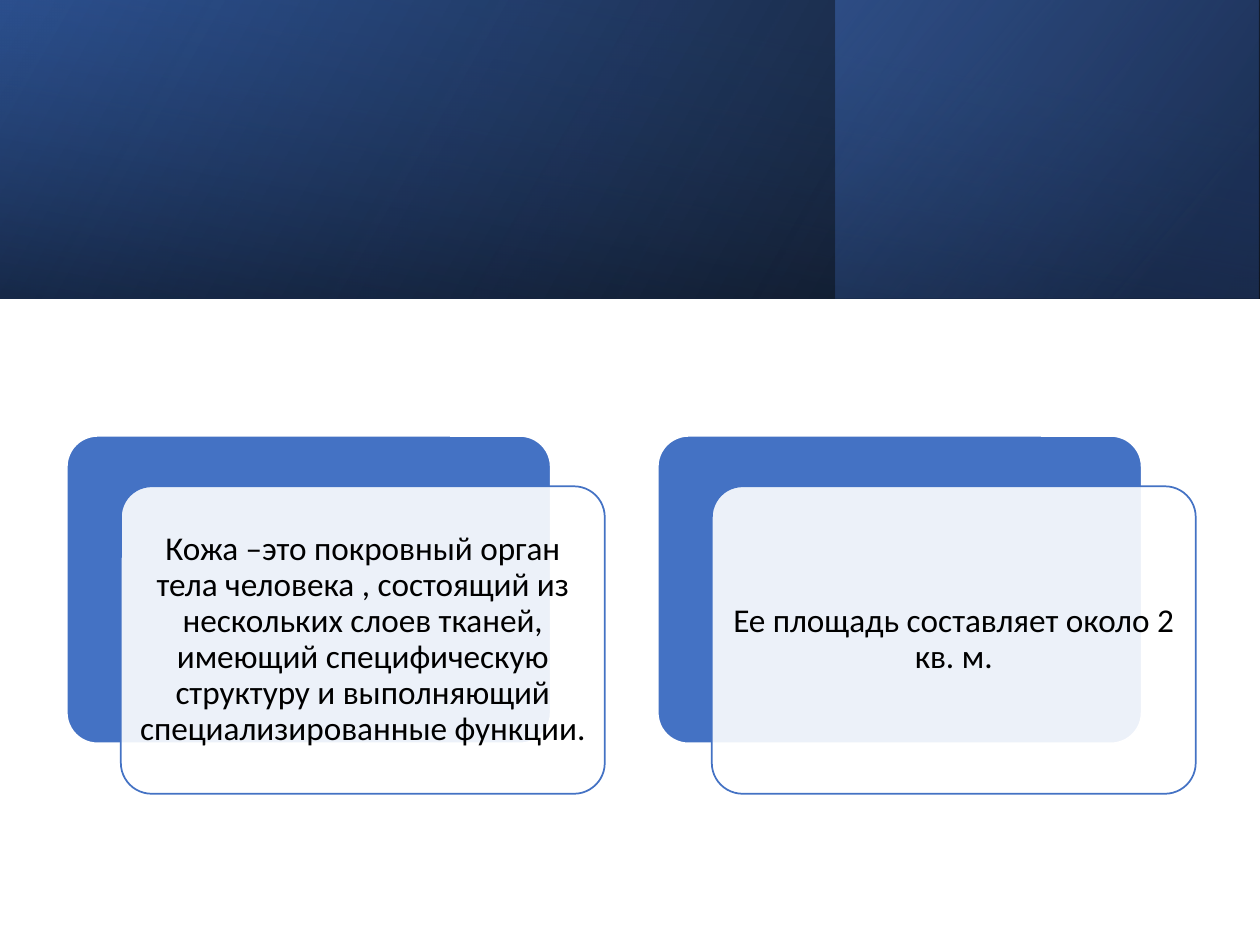
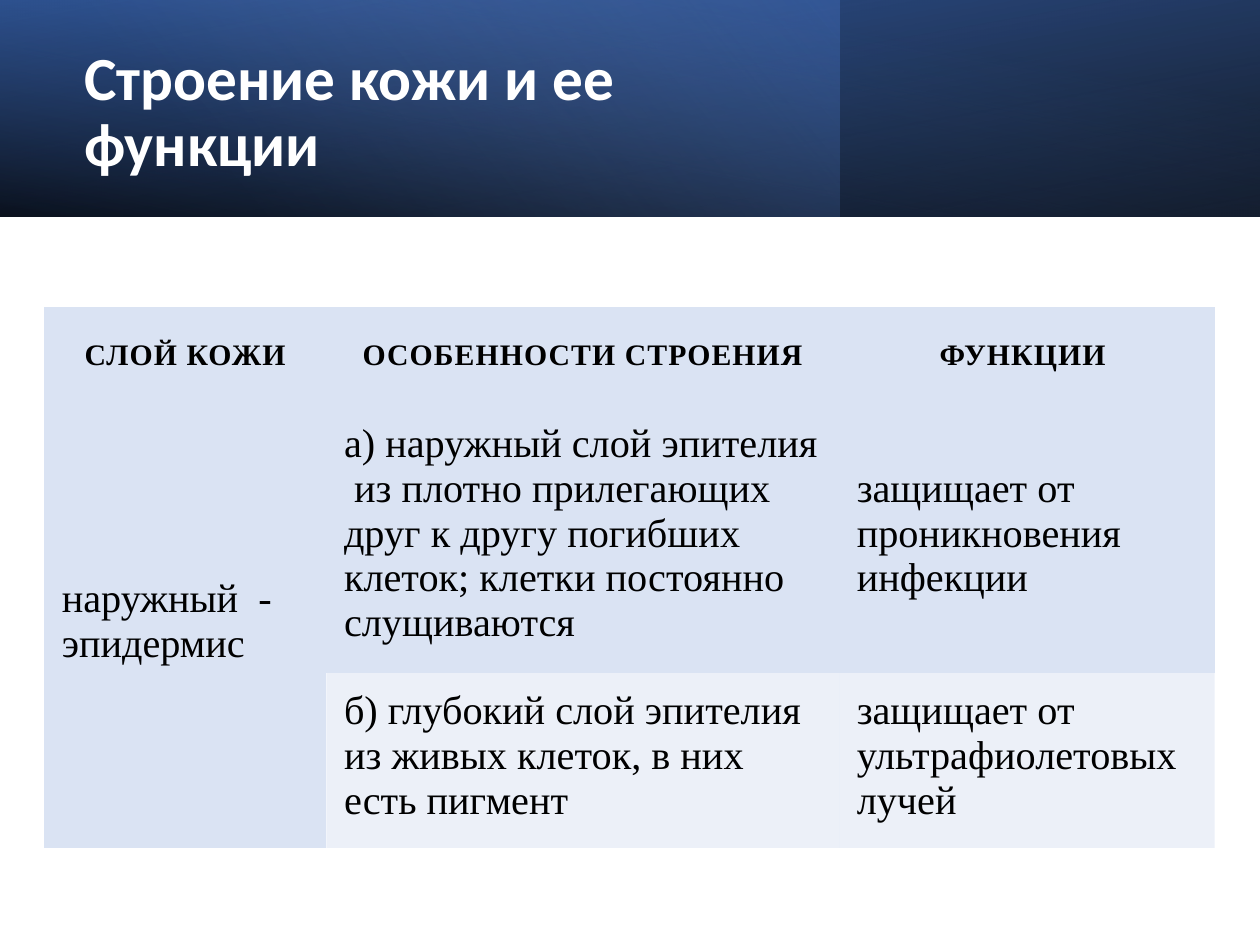
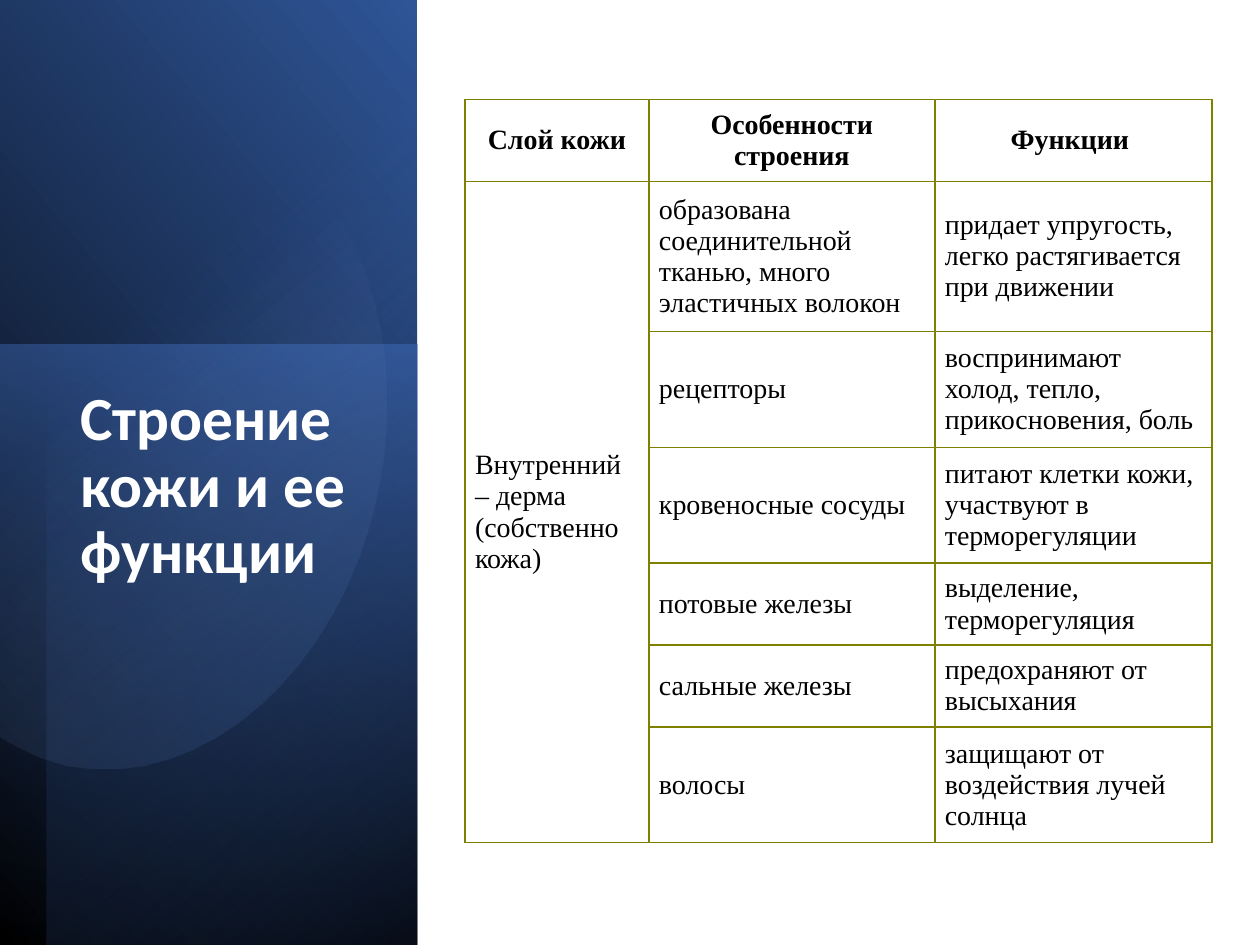
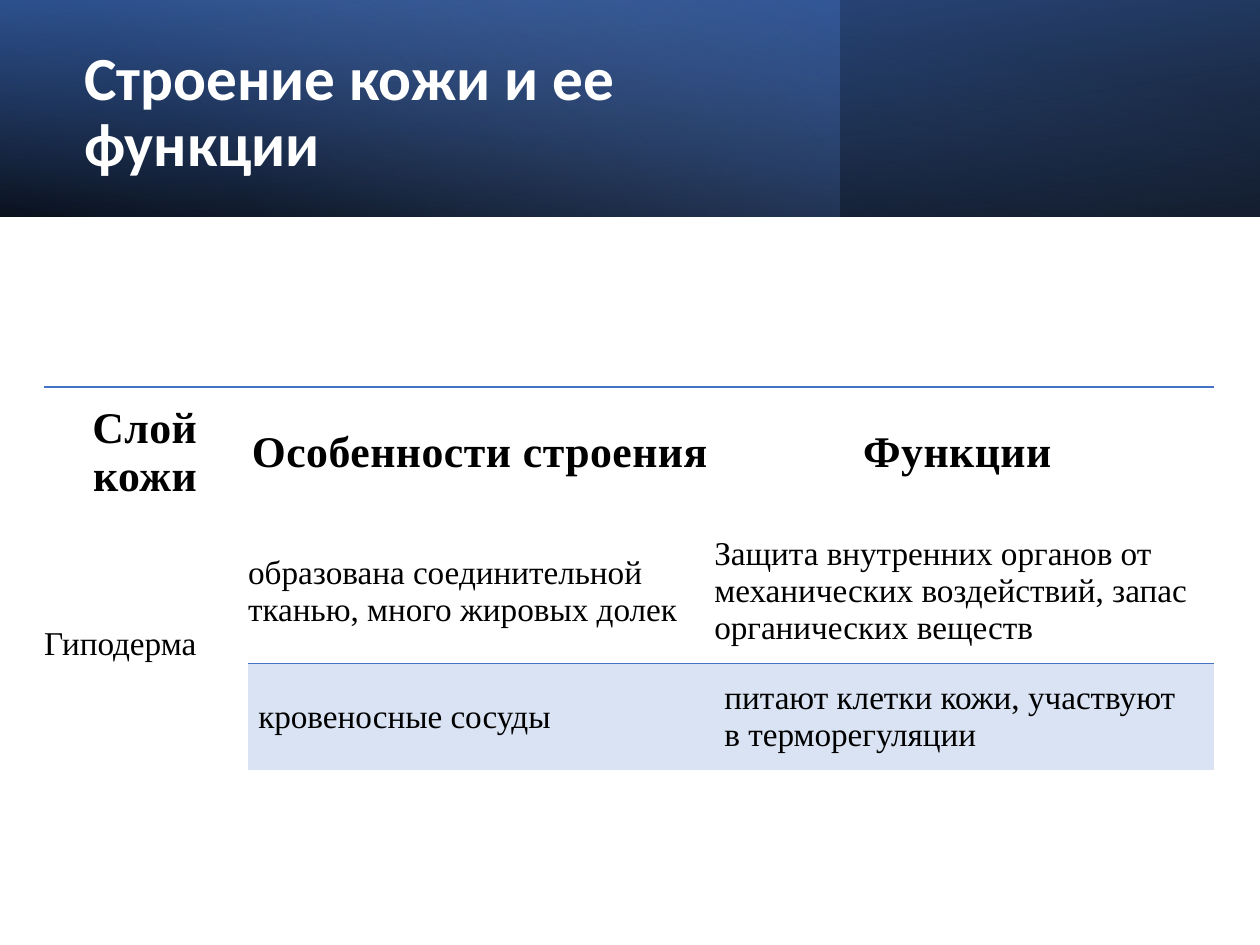
from dataclasses import dataclass

from lxml import etree
from pptx import Presentation
from pptx.dml.color import RGBColor
from pptx.enum.shapes import MSO_SHAPE
from pptx.enum.text import MSO_ANCHOR, PP_ALIGN
from pptx.oxml import parse_xml
from pptx.oxml.ns import nsdecls, qn
from pptx.util import Pt

RECT, ROUNDED = MSO_SHAPE.RECTANGLE, MSO_SHAPE.ROUNDED_RECTANGLE
TOP, MIDDLE = MSO_ANCHOR.TOP, MSO_ANCHOR.MIDDLE
LEFT, CENTER = PP_ALIGN.LEFT, PP_ALIGN.CENTER


@dataclass(frozen=True)
class Theme:
    black: str = "000000"
    white: str = "FFFFFF"
    blue: str = "4472C4"
    deep: str = "2F5597"
    navy: str = "203864"
    sky: str = "8FAADC"
    pale: str = "DAE3F3"
    olive: str = "808000"
    sans: str = "Calibri"
    serif: str = "Times New Roman"
    title: float = 35
    card: float = 19


T = Theme()
PLAIN_TABLE = "{2D5ABB26-0587-4C30-8999-92F81FD0307C}"
TITLE = "Строение кожи и ее функции"
W, H = 720, 540


def gradient(sp, stops, angle):
    """Fill a shape with a linear gradient of (position, colour, opacity) stops, all in percent."""
    gs = "".join(
        f'<a:gs pos="{pos * 1000}"><a:srgbClr val="{color}"><a:alpha val="{alpha * 1000}"/>'
        f"</a:srgbClr></a:gs>" for pos, color, alpha in stops)
    sp.shadow.inherit = False
    sp.line.fill.background()
    sp.fill.background()
    spPr = sp._element.spPr
    spPr.replace(spPr.find(qn("a:noFill")), parse_xml(
        f'<a:gradFill {nsdecls("a")} rotWithShape="1"><a:gsLst>{gs}</a:gsLst>'
        f'<a:lin ang="{round(angle * 60000)}" scaled="0"/></a:gradFill>'))


def write(tf, lines, font, color, align=LEFT, para=None, spc=0):
    """Write one paragraph per line with the same font and paragraph values."""
    for i, line in enumerate(lines):
        p = tf.paragraphs[0] if i == 0 else tf.add_paragraph()
        p.alignment = align
        for name, value in (para or {}).items():
            setattr(p, name, value)
        r = p.add_run()
        r.text = line
        for name, value in font.items():
            setattr(r.font, name, value)
        r.font.color.rgb = RGBColor.from_string(color)
        if spc:
            r._r.get_or_add_rPr().set("spc", str(round(spc * 100)))


prs = Presentation()
prs.slide_width, prs.slide_height = Pt(W), Pt(H)
slides = [prs.slides.add_slide(prs.slide_layouts[6]) for _ in range(4)]

# Gradient bands: visible box, rotation, flip, stops, angle
TALL, LOW, SIDE = 170.6, 123.8, 238.3
cover_band = [
    ((0, 0, W, TALL), 0, True, [(0, T.black, 96), (100, T.deep, 100)], 330),
    ((477.4, 0, 242, TALL), 0, True, [(19, T.navy, 68), (100, T.blue, 48)], 320),
    ((0, 0, W, TALL), 270, True, [(23, T.deep, 16), (99, T.black, 45)], 350),
]
top_band = [
    ((0, 0, W, LOW), 180, True, [(0, T.black, 96), (100, T.deep, 100)], 100),
    ((0, 0, 480, LOW), 0, False, [(0, T.blue, 41), (74, T.sky, 0)], 140),
    ((0, 0, W, LOW), 0, True, [(0, T.black, 63), (78, T.blue, 15)], 260),
]
side_band = [
    ((0, 0, SIDE, H), 90, True, [(0, T.black, 100), (100, T.deep, 100)], 310),
    ((0, 197, SIDE, 343), 270, False, [(0, T.blue, 50), (100, T.navy, 0)], 190),
    ((26.6, 0, SIDE - 26.6, H), 270, True, [(0, T.black, 59), (69, T.blue, 0)], 220),
]
for s, band in zip(slides, [cover_band, top_band, side_band, top_band]):
    for (x, y, w, h), rot, flip, stops, angle in band:
        # A quarter turn swaps width and height around the same centre
        fw, fh = (h, w) if rot in (90, 270) else (w, h)
        sp = s.shapes.add_shape(RECT, Pt(x + (w - fw) / 2), Pt(y + (h - fh) / 2), Pt(fw), Pt(fh))
        sp.rotation = rot
        if flip:
            sp._element.spPr.get_or_add_xfrm().set("flipH", "1")
        gradient(sp, stops, angle)

# Slide 1: two offset cards
cards = [
    "Кожа –это покровный орган тела человека , состоящий из нескольких слоев тканей, "
    "имеющий специфическую структуру и выполняющий специализированные функции.",
    "Ее площадь составляет около 2 кв. м.",
]
CARD_W, CARD_H, PAD = 276.5, 175.7, 5
group = slides[0].shapes.add_group_shape().shapes
for i, text in enumerate(cards):
    x, y = 38.2 + 337.7 * i, 249.1
    for dx, dy, fill, line, alpha in [(0, 0, T.blue, T.white, 100), (30.9, 28.8, T.white, T.blue, 90)]:
        sp = group.add_shape(ROUNDED, Pt(x + dx), Pt(y + dy), Pt(CARD_W), Pt(CARD_H))
        sp.adjustments[0] = 0.1
        sp.shadow.inherit = False
        sp.fill.solid()
        sp.fill.fore_color.rgb = RGBColor.from_string(fill)
        etree.SubElement(sp._element.spPr.find(qn("a:solidFill"))[0], qn("a:alpha"), val=str(alpha * 1000))
        sp.line.color.rgb = RGBColor.from_string(line)
        sp.line.width = Pt(1)
    tb = group.add_textbox(Pt(x + dx + PAD), Pt(y + dy + PAD), Pt(CARD_W - 2 * PAD), Pt(CARD_H - 2 * PAD))
    tf = tb.text_frame
    tf.word_wrap, tf.vertical_anchor = True, MIDDLE
    for side in ("left", "top", "right", "bottom"):
        setattr(tf, f"margin_{side}", Pt(5.7))
    write(tf, [text], {"name": T.sans, "size": Pt(T.card)}, T.black, CENTER,
          {"line_spacing": 0.9, "space_after": Pt(6.6)})

# Slide 3: translucent ellipse part, Bezier curves sampled into short segments
start = (86.4, 64.1)
curves = [
    [(95.8, 63.4), (105.8, 64.1), (115.2, 65.5)],
    [(192.2, 81.4), (236.9, 177.8), (216, 280.1)],
    [(195.1, 382.3), (115.9, 452.2), (38.9, 437)],
    [(24.5, 433.4), (11.5, 427.7), (-0.7, 419.8)],
    [(-8.6, 413.3), (-8.6, 413.3), (-8.6, 413.3)],
    [(6.5, 99.4), (6.5, 99.4), (6.5, 99.4)],
    [(18, 90), (18, 90), (18, 90)],
    [(38.9, 74.9), (62.6, 65.5), start],
]
points, p0 = [], start
for p1, p2, p3 in curves:
    for step in range(1, 17):
        t = step / 16
        u = 1 - t
        points.append(tuple(
            Pt(u**3 * a + 3 * u * u * t * b + 3 * u * t * t * c + t**3 * d)
            for a, b, c, d in zip(p0, p1, p2, p3)))
    p0 = p3
outline = slides[2].shapes.build_freeform(Pt(start[0]), Pt(start[1]))
outline.add_line_segments(points, close=True)
gradient(outline.convert_to_shape(), [(39, T.sky, 0), (100, T.deep, 26)], 51.6)

# Titles of slides 2 to 4
wide_title, side_title = (41, 19.4, 416.9, 91.4), (38.9, 218.2, 169.9, 241.9)
for s, box, anchor in zip(slides[1:], [wide_title, side_title, wide_title], [MIDDLE, TOP, MIDDLE]):
    tf = s.shapes.add_textbox(*map(Pt, box)).text_frame
    tf.word_wrap, tf.vertical_anchor = True, anchor
    write(tf, [TITLE], {"name": T.sans, "size": Pt(T.title), "bold": True}, T.white,
          para={"line_spacing": 0.9, "space_after": Pt(6)})

# Tables of slides 2 to 4; margins per row: left, top, right, bottom
# borders: rows, columns, sides, colour, width; fills: rows, columns, colour, opacity
TIGHT = (5.8, 2.9, 5.8, 2.9)
tables = [
    dict(at=(25.2, 175.7), cols=[161.3, 293, 214.6], rows=[54.7, 154.1, 100.1],
         sizes=(17, 23), spc=0.6,
         margins=[(15.1,) * 4, (10.1, 5, 10.1, 10.1), (10.1, 5, 10.1, 10.1)],
         borders=[],
         fills=[((0, 1), (0, 1, 2), T.pale, 100), ((2,), (0,), T.pale, 100), ((2,), (1, 2), T.pale, 50)],
         data=[["СЛОЙ КОЖИ", "ОСОБЕННОСТИ СТРОЕНИЯ", "ФУНКЦИИ "],
               ["наружный  - эпидермис",
                "а) наружный слой эпителия  из плотно прилегающих друг к другу погибших клеток; "
                "клетки постоянно слущиваются",
                "защищает от проникновения инфекции"],
               ["", "б) глубокий слой эпителия из живых клеток, в них есть пигмент",
                "защищает от ультрафиолетовых лучей"]]),
    dict(at=(265.7, 56.9), cols=[105.1, 163.4, 158.4],
         rows=[46.8, 85.7, 66.2, 66.2, 46.8, 46.8, 66.2],
         sizes=(16, 16), spc=0, margins=[TIGHT] * 7,
         borders=[(range(7), range(3), "LRTB", T.olive, 1)], fills=[],
         data=[["Слой кожи", "Особенности строения", "Функции "],
               ["Внутренний – дерма\n(собственно кожа)",
                "образована соединительной тканью, много эластичных волокон",
                "придает упругость, легко растягивается при движении"],
               ["", "рецепторы", "воспринимают холод, тепло, прикосновения, боль"],
               ["", "кровеносные сосуды", "питают клетки кожи, участвуют в терморегуляции"],
               ["", "потовые железы", "выделение, терморегуляция"],
               ["", "сальные железы", "предохраняют от высыхания"],
               ["", "волосы", "защищают от воздействия лучей солнца"]]),
    dict(at=(25.2, 221), cols=[116.6, 266.4, 285.8], rows=[75.6, 82.8, 60.5],
         sizes=(25, 19), spc=0.3,
         margins=[(0, 5.8, 1.4, 5.8), (0, 5.8, 11.5, 5.8), (5.8, 5.8, 11.5, 5.8)],
         borders=[((0,), (0, 1, 2), "T", T.blue, 1.5), ((1,), (1, 2), "B", T.blue, 0.75),
                  ((2,), (1, 2), "T", T.blue, 0.75)],
         fills=[((2,), (1, 2), T.pale, 100)],
         data=[["Слой кожи", "Особенности строения", "Функции "],
               ["Гиподерма", "образована соединительной тканью, много жировых долек",
                "Защита внутренних органов от механических воздействий, запас органических веществ"],
               ["", "кровеносные сосуды", "питают клетки кожи, участвуют в терморегуляции"]]),
]
for s, spec in zip(slides[1:], tables):
    cols, rows = spec["cols"], spec["rows"]
    frame = s.shapes.add_table(len(rows), len(cols), *map(Pt, spec["at"]), Pt(sum(cols)), Pt(sum(rows)))
    table = frame.table
    table.first_row = table.horz_banding = False
    table._tbl.tblPr.find(qn("a:tableStyleId")).text = PLAIN_TABLE
    for col, width in zip(table.columns, cols):
        col.width = Pt(width)
    for row, height in zip(table.rows, rows):
        row.height = Pt(height)
    table.cell(1, 0).merge(table.cell(len(rows) - 1, 0))

    for i, texts in enumerate(spec["data"]):
        head = i == 0
        for j, text in enumerate(texts):
            cell = table.cell(i, j)
            cell.vertical_anchor = MIDDLE
            for side, value in zip(("left", "top", "right", "bottom"), spec["margins"][i]):
                setattr(cell, f"margin_{side}", Pt(value))
            tcPr = cell._tc.get_or_add_tcPr()
            for in_rows, in_cols, sides, color, width in spec["borders"]:
                if i in in_rows and j in in_cols:
                    for side in sides:
                        tcPr.append(parse_xml(
                            f'<a:ln{side} {nsdecls("a")} w="{Pt(width)}"><a:solidFill>'
                            f'<a:srgbClr val="{color}"/></a:solidFill></a:ln{side}>'))
            cell.fill.background()
            for in_rows, in_cols, color, alpha in spec["fills"]:
                if i in in_rows and j in in_cols:
                    cell.fill.solid()
                    cell.fill.fore_color.rgb = RGBColor.from_string(color)
                    etree.SubElement(tcPr.find(qn("a:solidFill"))[0], qn("a:alpha"), val=str(alpha * 1000))
            if text:
                font = {"name": T.serif, "size": Pt(spec["sizes"][0 if head else 1]), "bold": head}
                write(cell.text_frame, text.split("\n"), font, T.black,
                      CENTER if head else LEFT, spc=spec["spc"] if head else 0)

prs.save("out.pptx")
